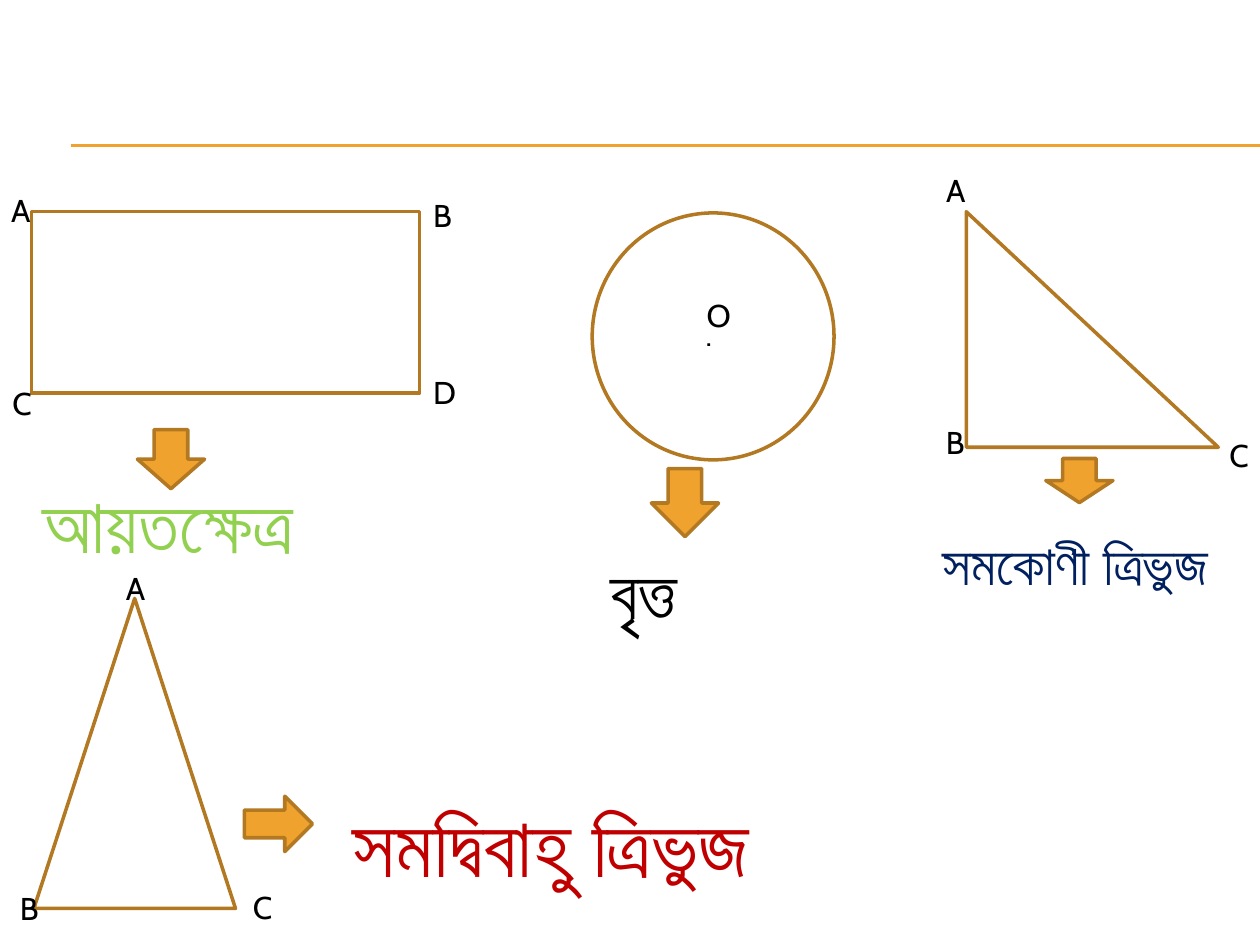
from dataclasses import dataclass

import pptx
import pptx.dml.color
import pptx.enum.shapes
import pptx.enum.text
import pptx.oxml.ns
import pptx.util
from lxml import etree

Pt = pptx.util.Pt
Kind = pptx.enum.shapes.MSO_SHAPE
ORANGE = "F0A22E"
BROWN = "B27822"
BLACK = "000000"


@dataclass
class Figure:
    kind: Kind
    left: float
    top: float
    width: float
    height: float
    fill: str | None = None


@dataclass
class Label:
    text: str
    left: float
    top: float
    width: float
    height: float = 28.8
    size: float = 18
    font: str = "Cabin"
    color: str = BLACK
    wrap: bool = False
    tail_size: float | None = None


FIGURES = [
    Figure(Kind.RECTANGLE, 18, 121, 221.8, 103.7),
    Figure(Kind.RIGHT_TRIANGLE, 552.2, 121, 144, 134.6),
    Figure(Kind.FLOWCHART_EXTRACT, 19.4, 342, 115.2, 177.1),
    Figure(Kind.DOWN_ARROW, 372.2, 267.8, 38.4, 38.9, ORANGE),
    Figure(Kind.DOWN_ARROW, 78.5, 245.5, 38.4, 33.8, ORANGE),
    Figure(Kind.DOWN_ARROW, 597.6, 262, 38.4, 25.2, ORANGE),
    Figure(Kind.FLOWCHART_CONNECTOR, 338.4, 121.7, 138.2, 141.1),
    Figure(Kind.RIGHT_ARROW, 139.7, 455, 38.9, 31.7, ORANGE),
]

CAPTIONS = [
    Label("আয়তক্ষেত্র", 17.3, 268.6, 170.6, 60.5, 44, "Arial", "92D050"),
    Label("সমকোণী ত্রিভুজ", 531.4, 298.8, 185, 46.1, 32, "Arial", "002060", True),
    Label("সমদ্বিবাহু ত্রিভুজ", 194.4, 450, 255.6, 65.5, 48, "Arial", "C00000", True),
    Label("বৃত্ত", 342, 306.7, 69.1, 60.5, 40, "Arial", tail_size=44),
]

POINTS = [
    Label("A", -0.7, 105.8, 25.2),
    Label("B", 240.5, 108.7, 24.5),
    Label("D", 240.5, 209.5, 25.9),
    Label("C", 0, 216, 24.5),
    Label(".", 398.2, 176.4, 12.2, wrap=True),
    Label("O", 396.7, 165.6, 26.6),
    Label("A", 533.5, 94.3, 25.2),
    Label("B", 533.5, 238.3, 24.5),
    Label("C", 695.5, 245.5, 24.5),
    Label("A", 64.8, 321.8, 25.2),
    Label("B", 4.3, 504.7, 24.5),
    Label("C", 137.5, 504, 24.5),
]


def rgb(value: str) -> pptx.dml.color.RGBColor:
    return pptx.dml.color.RGBColor.from_string(value)


def draw_rule(page: pptx.slide.Slide, top: float) -> None:
    rule = page.shapes.add_connector(
        pptx.enum.shapes.MSO_CONNECTOR.STRAIGHT, Pt(40.5), Pt(top), Pt(720), Pt(top)
    )
    rule.line.color.rgb = rgb(ORANGE)
    rule.line.width = Pt(0.75)
    etree.SubElement(rule._element.spPr, pptx.oxml.ns.qn("a:effectLst"))


def draw_figure(page: pptx.slide.Slide, figure: Figure) -> None:
    shape = page.shapes.add_shape(
        figure.kind, Pt(figure.left), Pt(figure.top), Pt(figure.width), Pt(figure.height)
    )
    shape.shadow.inherit = False
    shape.line.color.rgb = rgb(BROWN)
    shape.line.width = Pt(2)
    if figure.fill:
        shape.fill.solid()
        shape.fill.fore_color.rgb = rgb(figure.fill)
    else:
        shape.fill.background()


def draw_label(page: pptx.slide.Slide, label: Label) -> None:
    box = page.shapes.add_textbox(
        Pt(label.left), Pt(label.top), Pt(label.width), Pt(label.height)
    )
    frame = box.text_frame
    frame.word_wrap = label.wrap
    frame.auto_size = pptx.enum.text.MSO_AUTO_SIZE.SHAPE_TO_FIT_TEXT
    para = frame.paragraphs[0]
    para.font.size = Pt(label.size)
    para.font.name = label.font
    para.font.color.rgb = rgb(label.color)
    para.add_run().text = label.text
    if label.tail_size:
        span = para.add_run()
        span.text = " "
        span.font.size = Pt(label.tail_size)
        span.font.name = "Cabin"


def main() -> None:
    deck = pptx.Presentation()
    deck.slide_width = Pt(720)
    deck.slide_height = Pt(540)
    page = deck.slides.add_slide(deck.slide_layouts[6])
    for top in (82.8, 83.5):
        draw_rule(page, top)
    for figure in FIGURES:
        draw_figure(page, figure)
    for label in CAPTIONS + POINTS:
        draw_label(page, label)
    deck.save("out.pptx")


if __name__ == "__main__":
    main()
